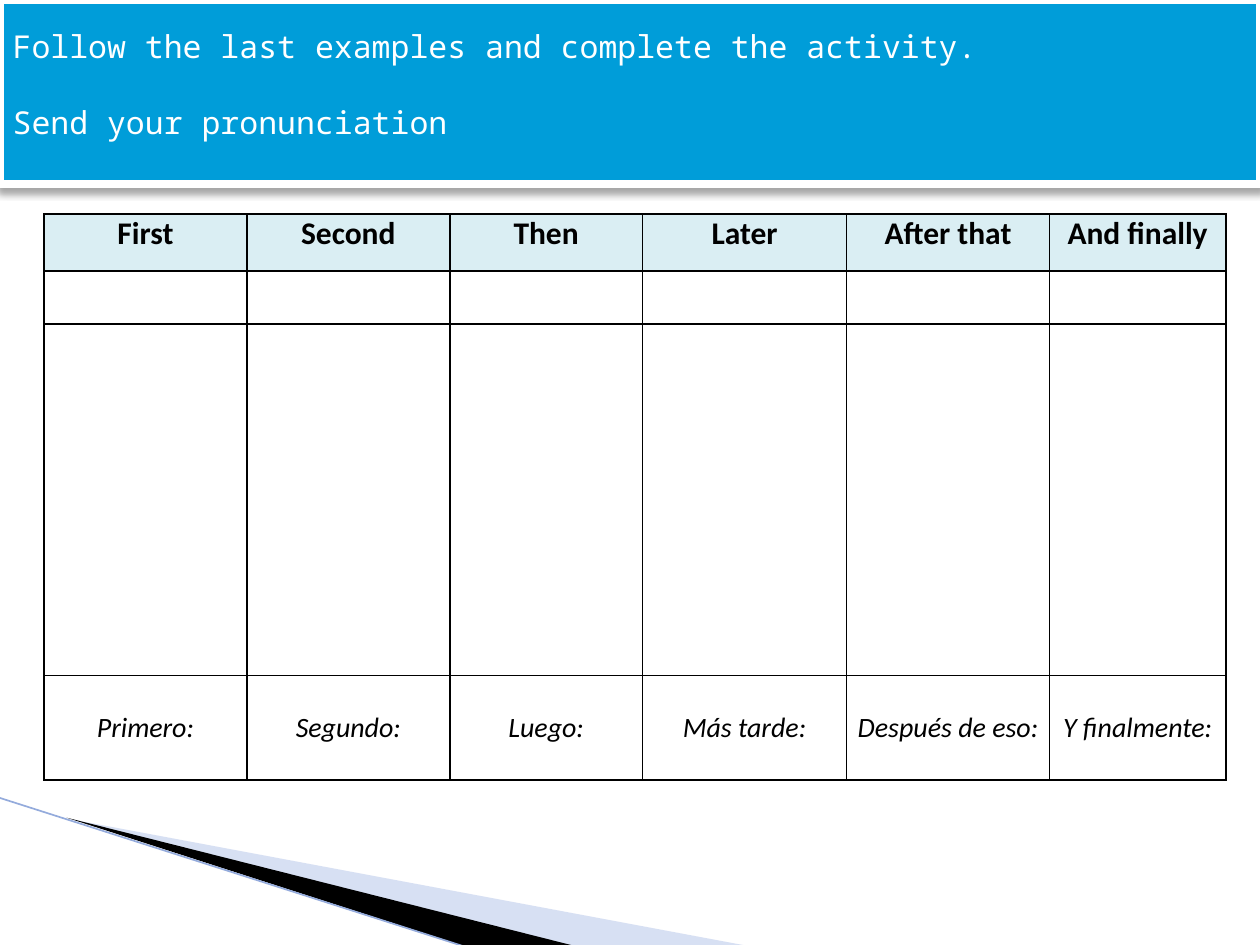
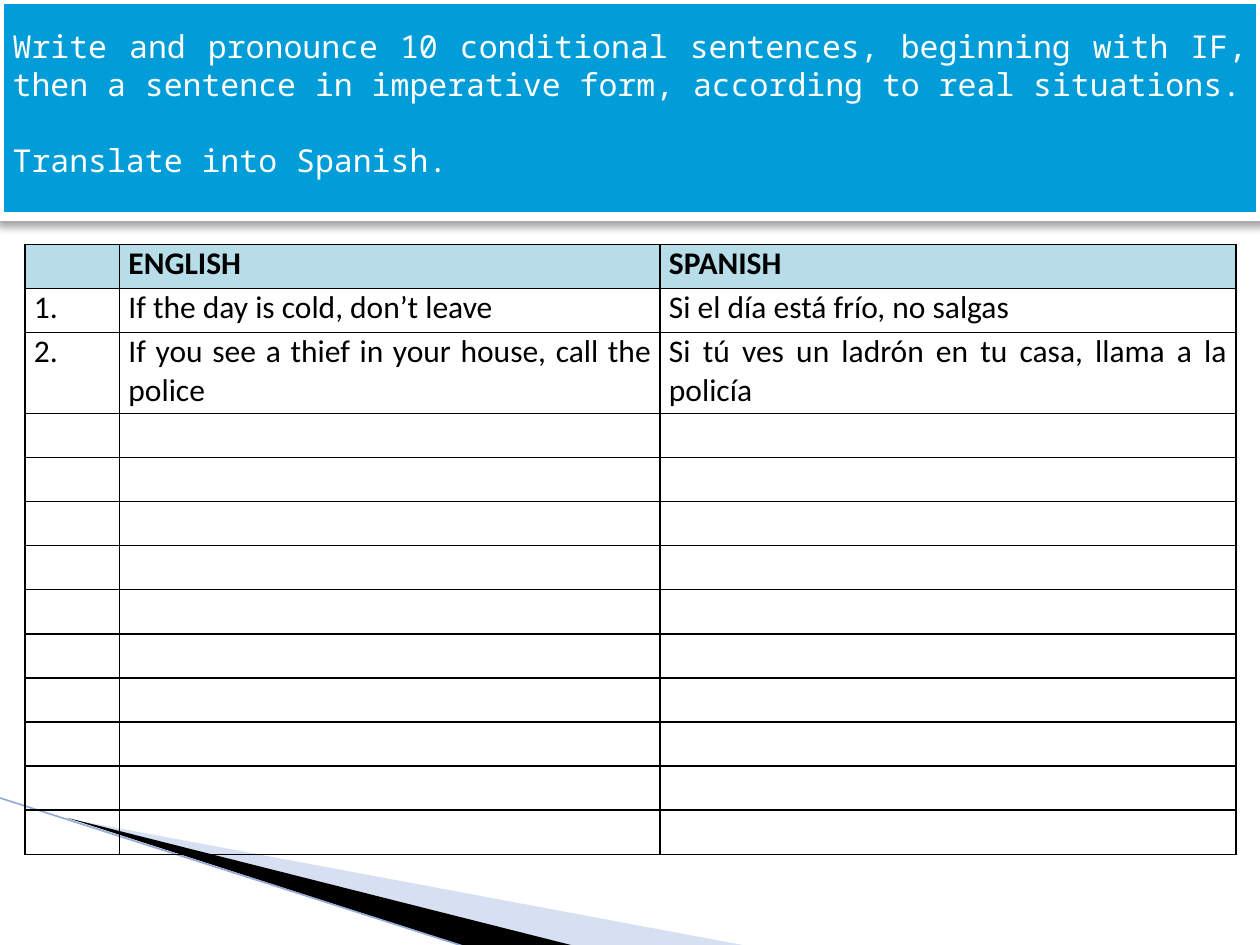
from lxml import etree
from pptx import Presentation
from pptx.dml.color import RGBColor
from pptx.enum.shapes import MSO_CONNECTOR
from pptx.enum.text import MSO_ANCHOR, MSO_AUTO_SIZE, PP_ALIGN
from pptx.oxml import parse_xml
from pptx.oxml.ns import nsdecls, qn
from pptx.util import Inches, Pt

WHITE = RGBColor(0xFF, 0xFF, 0xFF)
BLACK = RGBColor(0x00, 0x00, 0x00)
BAND_BLUE = RGBColor(0x00, 0x9D, 0xD9)
WEDGE_BLUE = RGBColor(0x9D, 0xB2, 0xE1)
EDGE_BLUE = RGBColor(0x94, 0xAB, 0xDC)
STEP_HEADER = RGBColor(0xDA, 0xEE, 0xF3)
SENTENCE_HEADER = RGBColor(0xB6, 0xDD, 0xE8)

LEFT, CENTER, JUSTIFY = PP_ALIGN.LEFT, PP_ALIGN.CENTER, PP_ALIGN.JUSTIFY
TOP, MIDDLE = MSO_ANCHOR.TOP, MSO_ANCHOR.MIDDLE
NO_FIT = MSO_AUTO_SIZE.NONE
STRAIGHT = MSO_CONNECTOR.STRAIGHT

TITLE_ONLY = 5
SLIDE_WIDTH, SLIDE_HEIGHT = 10, 7.5
TITLE_LINE = Pt(21.7)

TITLE_FONT = {"name": "Noto Sans Mono", "size": Pt(18), "bold": False}
BODY_FONT = {"name": "Calibri", "size": Pt(18), "bold": False}
HEADER_FONT = {**BODY_FONT, "bold": True}
MEANING_FONT = {**BODY_FONT, "size": Pt(16), "italic": True}


def apply(target, values):
    for name, value in values.items():
        setattr(target, name, value)


def write(para, text, font, color, align):
    para.alignment = align
    span = para.add_run()
    span.text = text
    apply(span.font, font)
    span.font.color.rgb = color


def add_effects(shape, effects=""):
    shape._element.spPr.append(parse_xml(
        f"<a:effectLst {nsdecls('a')}>{effects}</a:effectLst>"))


def add_wedge(page, points, color, opacity=100):
    start, *others = [(Inches(x), Inches(y)) for x, y in points]
    builder = page.shapes.build_freeform(*start)
    builder.add_line_segments(others, close=True)
    wedge = builder.convert_to_shape()
    wedge.shadow.inherit = False
    wedge.line.fill.background()
    wedge.fill.solid()
    wedge.fill.fore_color.rgb = color
    if opacity < 100:
        tint = wedge._element.spPr.find(".//" + qn("a:srgbClr"))
        etree.SubElement(tint, qn("a:alpha"), val=str(opacity * 1000))


def add_corner(page):
    """Draw the wedges and the slanted edge at the bottom left."""
    add_wedge(page, [(0.55, 6.5), (5.95, 7.51), (4.56, 7.51)], WEDGE_BLUE, 40)
    add_wedge(page, [(0.53, 6.49), (4.57, 7.51), (3.72, 7.52)], BLACK)
    edge = page.shapes.add_connector(
        STRAIGHT, Inches(-0.01), Inches(6.33), Inches(3.71), Inches(7.52))
    edge.line.color.rgb = EDGE_BLUE
    edge.line.width = Pt(0.95)
    add_effects(edge)


def add_title_band(page, height, texts):
    band = page.shapes.title
    apply(band, {"left": 0, "top": 0, "width": Inches(SLIDE_WIDTH),
                 "height": Inches(height)})
    band.fill.solid()
    band.fill.fore_color.rgb = BAND_BLUE
    band.line.color.rgb = WHITE
    band.line.width = Pt(5)
    add_effects(band, f'<a:outerShdw blurRad="{Pt(4)}" dist="{Pt(3)}" '
                      'dir="5400000" rotWithShape="0"><a:srgbClr val="000000">'
                      '<a:alpha val="35000"/></a:srgbClr></a:outerShdw>')
    frame = band.text_frame
    apply(frame, {"word_wrap": True, "auto_size": NO_FIT,
                  "vertical_anchor": TOP, "margin_top": Inches(0.21),
                  "margin_left": Inches(0.1), "margin_right": Inches(0.1)})
    for index, text in enumerate(texts):
        para = frame.add_paragraph() if index else frame.paragraphs[0]
        apply(para, {"line_spacing": TITLE_LINE,
                     "space_before": TITLE_LINE if index else 0})
        write(para, text, TITLE_FONT, WHITE, JUSTIFY)


def add_borders(cell):
    properties = cell._tc.get_or_add_tcPr()
    for side in ("lnL", "lnR", "lnT", "lnB"):
        properties.append(parse_xml(
            f'<a:{side} {nsdecls("a")} w="{Pt(1)}"><a:solidFill>'
            f'<a:srgbClr val="{BLACK}"/></a:solidFill></a:{side}>'))


def add_grid(page, left, top, widths, heights, header_color):
    """Add a ruled, empty table whose first row is tinted."""
    table = page.shapes.add_table(
        len(heights), len(widths), Inches(left), Inches(top),
        Inches(sum(widths)), Inches(sum(heights))).table
    apply(table, {"first_row": False, "horz_banding": False})
    for column, width in zip(table.columns, widths):
        column.width = Inches(width)
    for index, (row, height) in enumerate(zip(table.rows, heights)):
        row.height = Inches(height)
        for cell in row.cells:
            apply(cell, {"margin_left": Inches(0.07), "margin_right": Inches(0.07),
                         "margin_top": 0, "margin_bottom": 0})
            add_borders(cell)
            if index:
                cell.fill.background()
            else:
                cell.fill.solid()
                cell.fill.fore_color.rgb = header_color
    return table


def fill_row(table, row, texts, font, aligns, anchor=TOP):
    for column, (text, align) in enumerate(zip(texts, aligns)):
        if text:
            cell = table.cell(row, column)
            cell.vertical_anchor = anchor
            write(cell.text_frame.paragraphs[0], text, font, BLACK, align)


def add_page(deck, band_height, title_texts):
    page = deck.slides.add_slide(deck.slide_layouts[TITLE_ONLY])
    add_title_band(page, band_height, title_texts)
    add_corner(page)
    return page


def add_sequence_page(deck):
    page = add_page(deck, 1.46, [
        "Follow the last examples and complete the activity.",
        "Send your pronunciation"])
    steps = ["First", "Second", "Then", "Later", "After that", "And finally"]
    meanings = ["Primero:", "Segundo:", "Luego:", "Más tarde:",
                "Después de eso:", "Y finalmente:"]
    table = add_grid(page, 0.35, 1.7, [1.61, 1.61, 1.53, 1.62, 1.61, 1.4],
                     [0.45, 0.42, 2.79, 0.83], STEP_HEADER)
    centered = [CENTER] * len(steps)
    fill_row(table, 0, steps, HEADER_FONT, centered)
    fill_row(table, 3, meanings, MEANING_FONT, centered, MIDDLE)


def add_conditionals_page(deck):
    page = add_page(deck, 1.72, [
        "Write and pronounce 10 conditional sentences, beginning with IF, "
        "then a sentence in imperative form, according to real situations.",
        "Translate into Spanish."])
    sentences = [
        ("1.", "If the day is cold, don’t leave",
         "Si el día está frío, no salgas"),
        ("2.", "If you see a thief in your house, call the police",
         "Si tú ves un ladrón en tu casa, llama a la policía"),
    ]
    heights = [0.35, 0.35, 0.64] + [0.35] * 10
    table = add_grid(page, 0.2, 1.94, [0.75, 4.29, 4.57], heights,
                     SENTENCE_HEADER)
    fill_row(table, 0, ["", "ENGLISH", "SPANISH"], HEADER_FONT, [LEFT] * 3)
    for row, texts in enumerate(sentences, start=1):
        fill_row(table, row, texts, BODY_FONT, [LEFT, JUSTIFY, JUSTIFY])


def main():
    deck = Presentation()
    deck.slide_width = Inches(SLIDE_WIDTH)
    deck.slide_height = Inches(SLIDE_HEIGHT)
    add_sequence_page(deck)
    add_conditionals_page(deck)
    deck.save("out.pptx")


if __name__ == "__main__":
    main()
